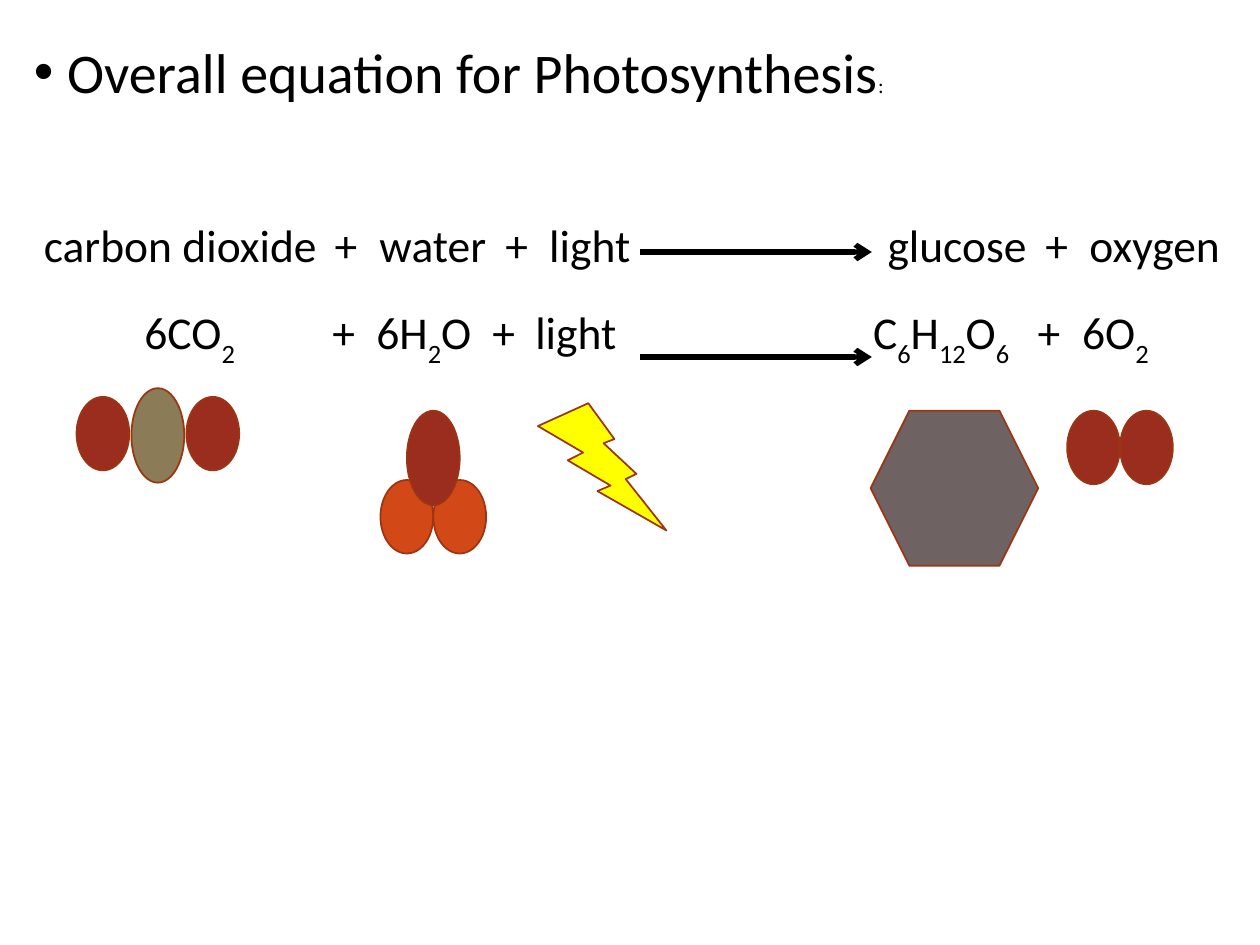
from itertools import groupby

from lxml.etree import SubElement
from pptx import Presentation
from pptx.dml.color import RGBColor
from pptx.enum.shapes import MSO_CONNECTOR as Link, MSO_SHAPE as Shape
from pptx.enum.text import MSO_ANCHOR as Anchor, MSO_AUTO_SIZE as Fit, PP_ALIGN as Align
from pptx.oxml.ns import qn
from pptx.util import Pt

COLORS = {
    "text": "000000",
    "outline": "9C3511",
    "oxygen": "9B2D1F",
    "carbon": "8B7B57",
    "hydrogen": "D34817",
    "glucose": "6E6263",
    "light": "FFFF00",
}
ATOM_WIDTH, SMALL, TALL = 30.2, 42, 54


def color(name):
    return RGBColor.from_string(COLORS[name])


def add_span(para, text, size, subscript=False):
    span = para.add_run()
    span.text = text
    for key, value in {"name": "Calibri", "size": Pt(size), "bold": False}.items():
        setattr(span.font, key, value)
    span.font.color.rgb = color("text")
    if subscript:
        span.font._element.set("baseline", "-30000")


def format_frame(frame, anchor):
    values = {"word_wrap": True, "auto_size": Fit.NONE, "vertical_anchor": anchor}
    for key, value in values.items():
        setattr(frame, key, value)


def place_title(page, left, top, width, height):
    title = page.shapes.title
    for key, value in zip(("left", "top", "width", "height"), (left, top, width, height)):
        setattr(title, key, Pt(value))
    format_frame(title.text_frame, Anchor.TOP)
    para = title.text_frame.paragraphs[0]
    para.alignment = Align.LEFT
    props = para._p.get_or_add_pPr()
    props.set("marL", str(Pt(18.9)))
    props.set("indent", str(-Pt(18.9)))
    SubElement(props, qn("a:buFont"), typeface="Arial")
    SubElement(props, qn("a:buChar"), char="•")
    add_span(para, "Overall equation for Photosynthesis", 32)
    add_span(para, ":", 12)


def place_equation(page, left, top, width, height, anchor, terms):
    box = page.shapes.add_textbox(Pt(left), Pt(top), Pt(width), Pt(height))
    format_frame(box.text_frame, anchor)
    para = box.text_frame.paragraphs[0]
    inner_left = left + 7.2
    tabs = SubElement(para._p.get_or_add_pPr(), qn("a:tabLst"))
    for x, term in terms:
        if x > inner_left:
            SubElement(tabs, qn("a:tab"), pos=str(Pt(x - inner_left)), algn="l")
            add_span(para, "\t", 26)
        parts = ["".join(chars) for _, chars in groupby(term, str.isdigit)]
        for index, part in enumerate(parts):
            add_span(para, part, 26, subscript=index > 0 and part.isdigit())


def place_arrow(page, left, y, width):
    arrow = page.shapes.add_connector(Link.STRAIGHT, Pt(left), Pt(y), Pt(left + width), Pt(y))
    arrow.line.color.rgb = color("text")
    arrow.line.width = Pt(3)
    SubElement(arrow.line._get_or_add_ln(), qn("a:tailEnd"), type="arrow")
    SubElement(arrow._element.spPr, qn("a:effectLst"))


def place_shape(page, kind, left, top, width, height, fill):
    shape = page.shapes.add_shape(kind, Pt(left), Pt(top), Pt(width), Pt(height))
    shape.shadow.inherit = False
    shape.fill.solid()
    shape.fill.fore_color.rgb = color(fill)
    shape.line.color.rgb = color("outline")
    shape.line.width = Pt(1)
    return shape


def place_molecule(page, left, top, atoms):
    for x, y, height, element in atoms:
        place_shape(page, Shape.OVAL, left + x, top + y, ATOM_WIDTH, height, element)


def main():
    deck = Presentation()
    deck.slide_width, deck.slide_height = Pt(720), Pt(540)
    page = deck.slides.add_slide(deck.slide_layouts[5])

    place_title(page, 12.2, 18, 684, 68)
    place_equation(page, 18, 120.2, 690, 72.7, Anchor.TOP, [
        (25.2, "carbon dioxide"), (191.4, "+"), (217, "water"), (289, "+"),
        (314, "light"), (507.3, "glucose"), (597.5, "+"), (622.7, "oxygen"),
    ])
    place_equation(page, 32.4, 172.8, 663, 38.9, Anchor.MIDDLE, [
        (82.6, "6CO2"), (190, "+"), (215.2, "6H2O"), (281.5, "+"),
        (306, "light"), (499, "C6H12O6"), (593, "+"), (618.5, "6O2"),
    ])
    for y in (144, 204):
        place_arrow(page, 365.8, y, 132.4)

    hexagon = place_shape(page, Shape.HEXAGON, 497.5, 234.7, 95.8, 88.6, "glucose")
    hexagon.adjustments[0] = 0.25
    place_molecule(page, 609.8, 234.7, [
        (0, 0, SMALL, "oxygen"), (ATOM_WIDTH, 0, SMALL, "oxygen"),
    ])
    place_molecule(page, 43.7, 221.8, [
        (62.8, 5, SMALL, "oxygen"), (0, 5, SMALL, "oxygen"), (31.4, 0, TALL, "carbon"),
    ])
    place_molecule(page, 217.4, 234.7, [
        (0, 39.6, SMALL, "hydrogen"), (ATOM_WIDTH, 39.6, SMALL, "hydrogen"),
        (ATOM_WIDTH / 2, 0, TALL, "oxygen"),
    ])
    place_shape(page, Shape.LIGHTNING_BOLT, 307.4, 230.4, 73.4, 72.7, "light")
    deck.save("out.pptx")


if __name__ == "__main__":
    main()
